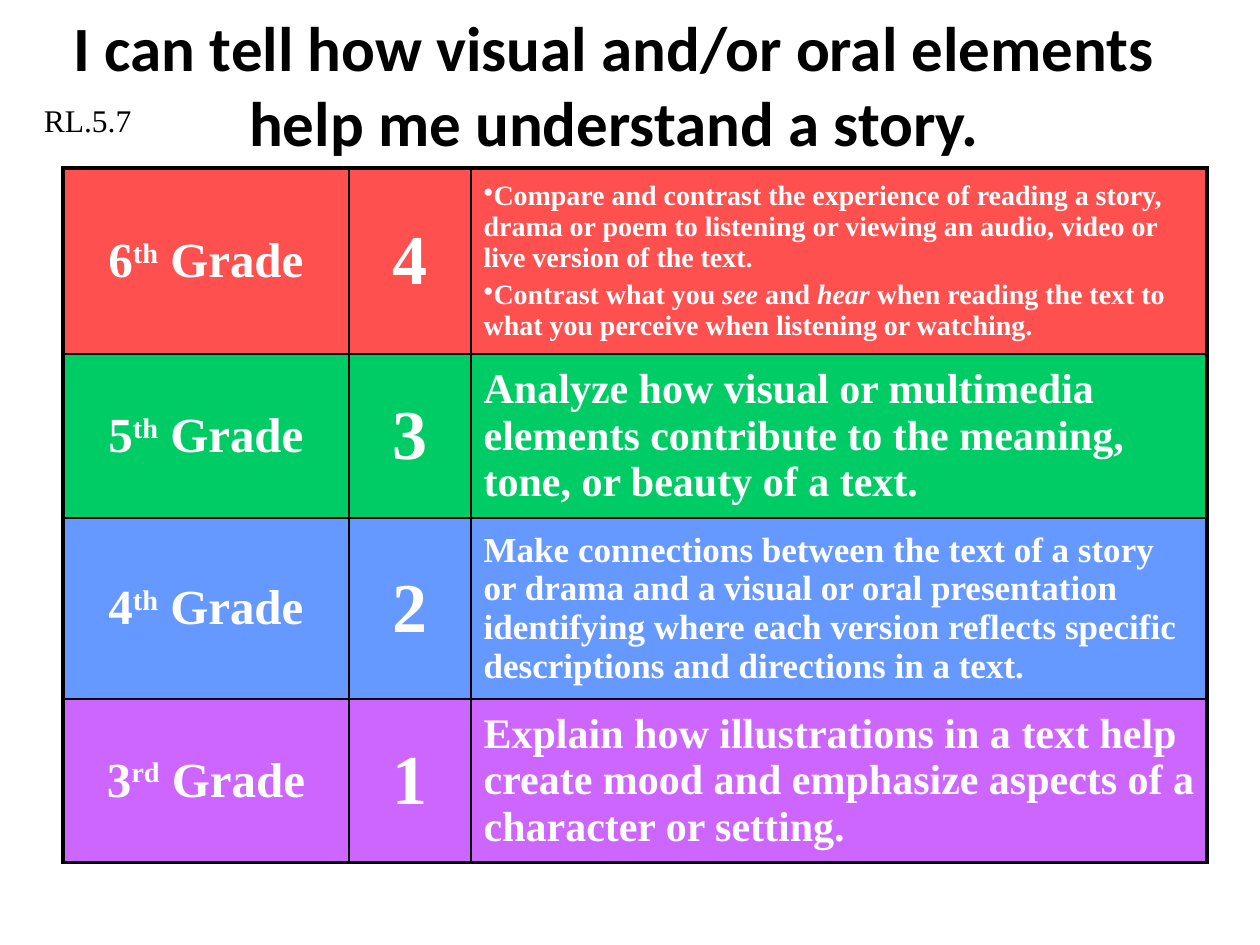
from lxml.etree import SubElement
from pptx import Presentation
from pptx.dml.color import RGBColor
from pptx.enum.text import MSO_ANCHOR, PP_ALIGN
from pptx.oxml.ns import qn
from pptx.util import Pt

SERIF = "Times New Roman"
COLS = [163.4, 69.8, 420.6]
ROWS = [
    ("6", "th", "4", "FF5050", 99.4, 16, [
        [("Compare and contrast the experience of reading a story, drama or poem "
          "to listening or viewing an audio, video or live version of the text.", "")],
        [("Contrast what you ", ""), ("see", "i"), (" and ", ""), ("hear", "i"),
         (" when reading the text to what you perceive when listening or watching.", "")]]),
    ("5", "th", "3", "00CC66", 93.6, 24, [
        [("Analyze how visual or multimedia elements contribute to the meaning, "
          "tone, or beauty of a text.", "")]]),
    ("4", "th", "2", "6699FF", 96, 20, [
        [("Make connections between the text of a story or drama and a visual or oral "
          "presentation identifying where each version reflects specific descriptions "
          "and directions in a text.", "")]]),
    ("3", "rd", "1", "CC66FF", 87, 24, [
        [("Explain how illustrations in a text help create mood and emphasize aspects "
          "of a character or setting.", "")]]),
]


def color(code):
    """Turn a hex string into a colour."""
    return RGBColor.from_string(code)


class Board:
    """Holds the style and the current slide."""

    def __init__(self, slide, ink="000000", light="FFFFFF"):
        """Keep the slide and its two text colours."""
        self.slide, self.ink, self.light = slide, ink, light

    def style(self, run, face, size, code, bold=False):
        """Set the font of one run."""
        font = run.font
        font.name, font.size, font.bold = face, Pt(size), bold
        font.color.rgb = color(code)

    def label(self, text, box, face, size, bold=False, align=PP_ALIGN.LEFT,
              anchor=MSO_ANCHOR.TOP):
        """Add a text box."""
        frame = self.slide.shapes.add_textbox(*map(Pt, box)).text_frame
        frame.word_wrap, frame.vertical_anchor = True, anchor
        frame.text = text
        para = frame.paragraphs[0]
        para.alignment = align
        self.style(para.runs[0], face, size, self.ink, bold)

    def edge(self, cell, widths):
        """Draw the borders of a cell."""
        props = cell._tc.get_or_add_tcPr()
        for side, width in zip("LRTB", widths):
            line = SubElement(props, qn(f"a:ln{side}"), w=str(Pt(width)))
            fill = SubElement(line, qn("a:solidFill"))
            SubElement(fill, qn("a:srgbClr"), val=self.ink)

    def fill(self, cell, paras, size, code, align=PP_ALIGN.LEFT):
        """Write styled paragraphs into a coloured cell."""
        cell.fill.solid()
        cell.fill.fore_color.rgb = color(code)
        cell.vertical_anchor = MSO_ANCHOR.MIDDLE
        frame = cell.text_frame
        for num, parts in enumerate(paras):
            para = frame.add_paragraph() if num else frame.paragraphs[0]
            para.alignment, para.space_before = align, Pt(size * 0.2)
            if len(paras) > 1:
                SubElement(para._p.get_or_add_pPr(), qn("a:buChar"), char="•")
            for text, mark in parts:
                run = para.add_run()
                run.text = text
                self.style(run, SERIF, size, self.light, True)
                if mark == "i":
                    run.font.italic = True
                elif mark == "sup":
                    run.font._element.set("baseline", "30000")

    def table(self, left, top, cols, rows):
        """Add the grade table."""
        high = sum(row[4] for row in rows)
        box = map(Pt, (left, top, sum(cols), high))
        grid = self.slide.shapes.add_table(len(rows), len(cols), *box).table
        grid.first_row = grid.horz_banding = False
        for col, width in zip(grid.columns, cols):
            col.width = Pt(width)
        last = len(cols) - 1
        for num, (grade, suffix, score, code, tall, size, goals) in enumerate(rows):
            grid.rows[num].height = Pt(tall)
            cells = [grid.cell(num, col) for col in range(len(cols))]
            for col, cell in enumerate(cells):
                self.edge(cell, (1 if col else 2.25, 2.25 if col == last else 1,
                                 1.5 if num else 2.25, 1.5))
            name = [(grade, ""), (suffix, "sup"), (" Grade", "")]
            self.fill(cells[0], [name], 28, code, PP_ALIGN.CENTER)
            self.fill(cells[1], [[(score, "")]], 40, code, PP_ALIGN.CENTER)
            self.fill(cells[2], goals, size, code)


def main():
    """Build and save the slide."""
    deck = Presentation()
    deck.slide_width, deck.slide_height = Pt(720), Pt(540)
    board = Board(deck.slides.add_slide(deck.slide_layouts[6]))
    board.label("I can tell how visual and/or oral elements help me understand a story.",
                (12, 12, 678, 72), "Calibri", 36, True, PP_ALIGN.CENTER, MSO_ANCHOR.MIDDLE)
    board.table(36, 96, COLS, ROWS)
    board.label("RL.5.7", (18, 54, 102, 29), SERIF, 18)
    deck.save("out.pptx")


if __name__ == "__main__":
    main()
